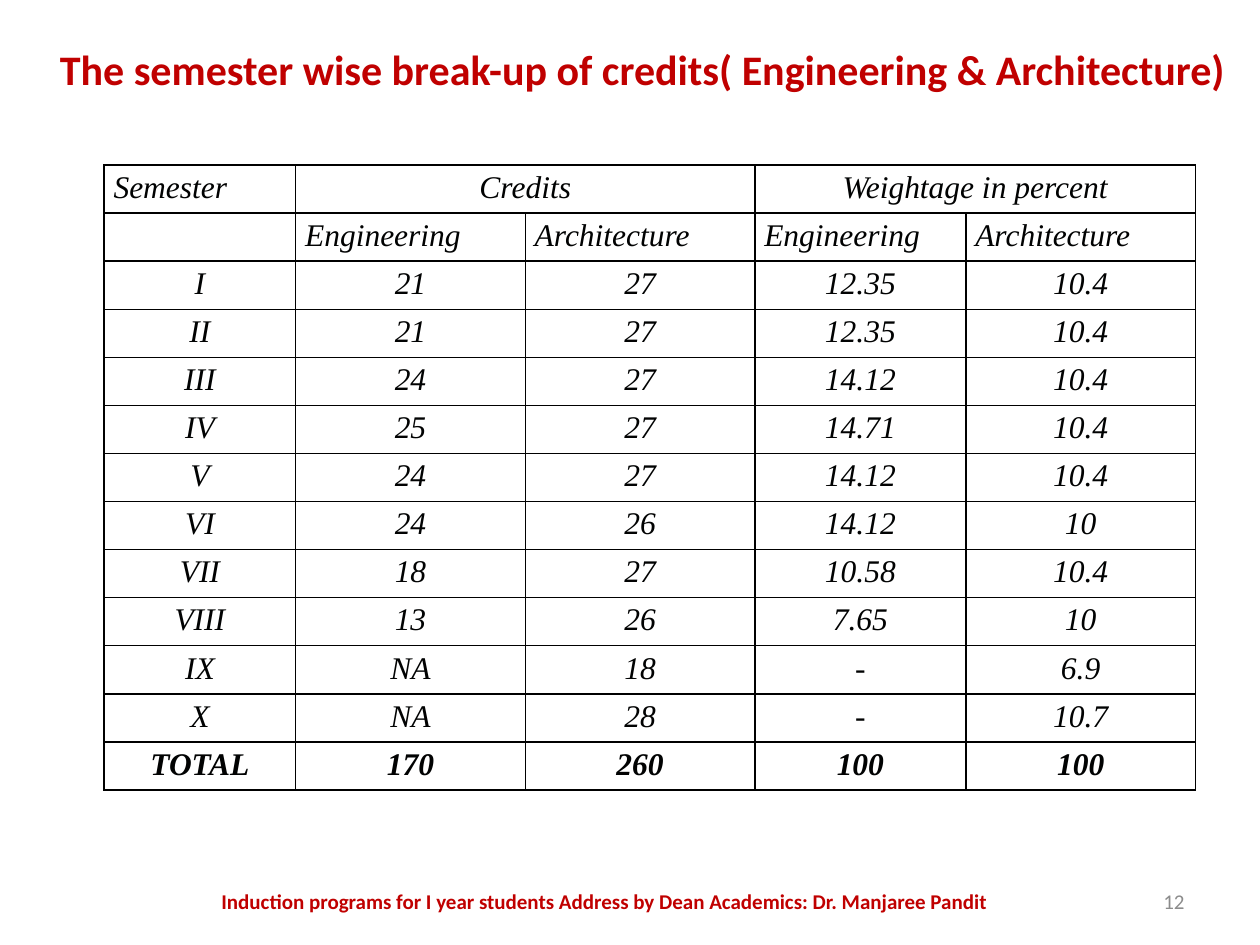
import pptx
import pptx.util
import pptx.dml.color
import pptx.enum.text
import pptx.oxml
from pptx.oxml.ns import nsdecls

Pt = pptx.util.Pt
ALIGN = pptx.enum.text.PP_ALIGN
ANCHOR = pptx.enum.text.MSO_ANCHOR

# Content
TITLE = "The semester wise break-up of credits( Engineering & Architecture)"
FOOTER = "Induction programs for I year students Address by Dean Academics: Dr. Manjaree Pandit"
PAGE_NUMBER = "12"
HEADINGS = [
    ("Semester", "Credits", "", "Weightage in percent", ""),
    ("", "Engineering", "Architecture", "Engineering", "Architecture"),
]
SEMESTERS = [
    ("I", "21", "27", "12.35", "10.4"),
    ("II", "21", "27", "12.35", "10.4"),
    ("III", "24", "27", "14.12", "10.4"),
    ("IV", "25", "27", "14.71", "10.4"),
    ("V", "24", "27", "14.12", "10.4"),
    ("VI", "24", "26", "14.12", "10"),
    ("VII", "18", "27", "10.58", "10.4"),
    ("VIII", "13", "26", "7.65", "10"),
    ("IX", "NA", "18", "-", "6.9"),
    ("X", "NA", "28", "-", "10.7"),
]
TOTAL = ("TOTAL", "170", "260", "100", "100")

# Layout in points
TABLE_LEFT, TABLE_TOP, ROW_HEIGHT = 59.5, 94.3, 27.47
COLUMN_WIDTHS = [109.5, 131.2, 131.2, 120.6, 131.2]
MERGED_COLUMNS = [1, 3]

# Formats
RED, GREY, INK, BORDER = "C00000", "8C8C8C", "010202", "000000"
TITLE_FONT = {"name": "Calibri", "size": Pt(24), "bold": True}
FOOTER_FONT = {"name": "Calibri", "size": Pt(12), "bold": True}
NUMBER_FONT = {"name": "Calibri", "size": Pt(12), "bold": False}
CELL_FONT = {"name": "Times New Roman", "size": Pt(18), "italic": True, "bold": False}
TOTAL_FONT = {**CELL_FONT, "bold": True}
CELL_FORMAT = {"margin_left": Pt(5.4), "margin_right": Pt(5.4),
               "margin_top": 0, "margin_bottom": 0, "vertical_anchor": ANCHOR.TOP}


def set_all(target, values):
    for name, value in values.items():
        setattr(target, name, value)


def color(hex_text):
    return pptx.dml.color.RGBColor.from_string(hex_text)


def write(frame, text, font, hex_text, align, line_spacing=1.0):
    para = frame.paragraphs[0]
    set_all(para, {"alignment": align, "line_spacing": line_spacing})
    # An empty cell takes its text size from the paragraph
    set_all(para.font, font)
    if text:
        span = para.add_run()
        span.text = text
        set_all(span.font, font)
        span.font.color.rgb = color(hex_text)


def place(shape, left, top, width, height, anchor):
    set_all(shape, {"left": Pt(left), "top": Pt(top), "width": Pt(width), "height": Pt(height)})
    set_all(shape.text_frame, {"word_wrap": True, "vertical_anchor": anchor,
                               "auto_size": pptx.enum.text.MSO_AUTO_SIZE.NONE})


def add_label(page, area, text, font, hex_text, align):
    box = page.shapes.add_textbox(0, 0, 0, 0)
    place(box, *area, ANCHOR.MIDDLE)
    write(box.text_frame, text, font, hex_text, align)


def set_borders(cell):
    properties = cell._tc.get_or_add_tcPr()
    for position, side in enumerate(("lnL", "lnR", "lnT", "lnB")):
        properties.insert(position, pptx.oxml.parse_xml(
            f'<a:{side} {nsdecls("a")} w="12700"><a:solidFill>'
            f'<a:srgbClr val="{BORDER}"/></a:solidFill></a:{side}>'))


def add_credit_table(page):
    rows = HEADINGS + SEMESTERS + [TOTAL]
    frame = page.shapes.add_table(
        len(rows), len(COLUMN_WIDTHS), Pt(TABLE_LEFT), Pt(TABLE_TOP),
        Pt(sum(COLUMN_WIDTHS)), Pt(ROW_HEIGHT * len(rows)))
    table = frame.table
    set_all(table, {"first_row": False, "horz_banding": False})
    for column, width in zip(table.columns, COLUMN_WIDTHS):
        column.width = Pt(width)
    for row_index, values in enumerate(rows):
        table.rows[row_index].height = Pt(ROW_HEIGHT)
        for column_index, text in enumerate(values):
            cell = table.cell(row_index, column_index)
            set_all(cell, CELL_FORMAT)
            cell.fill.background()
            set_borders(cell)
            spans_two = row_index == 0 and column_index in MERGED_COLUMNS
            centred = spans_two or row_index >= len(HEADINGS)
            write(cell.text_frame, text, TOTAL_FONT if values is TOTAL else CELL_FONT,
                  INK, ALIGN.CENTER if centred else ALIGN.LEFT, 1.15)
    for column_index in MERGED_COLUMNS:
        table.cell(0, column_index).merge(table.cell(0, column_index + 1))


def main():
    deck = pptx.Presentation()
    set_all(deck, {"slide_width": Pt(720), "slide_height": Pt(540)})
    page = deck.slides.add_slide(deck.slide_layouts[5])

    # Title
    title = page.shapes.title
    place(title, 14.4, 21, 705.6, 36, ANCHOR.TOP)
    write(title.text_frame, TITLE, TITLE_FONT, RED, ALIGN.CENTER)

    # Credits table
    add_credit_table(page)

    # Footer and page number
    add_label(page, (31, 500.5, 629, 28.8), FOOTER, FOOTER_FONT, RED, ALIGN.CENTER)
    add_label(page, (516, 500.5, 168, 28.8), PAGE_NUMBER, NUMBER_FONT, GREY, ALIGN.RIGHT)

    deck.save("out.pptx")


if __name__ == "__main__":
    main()
